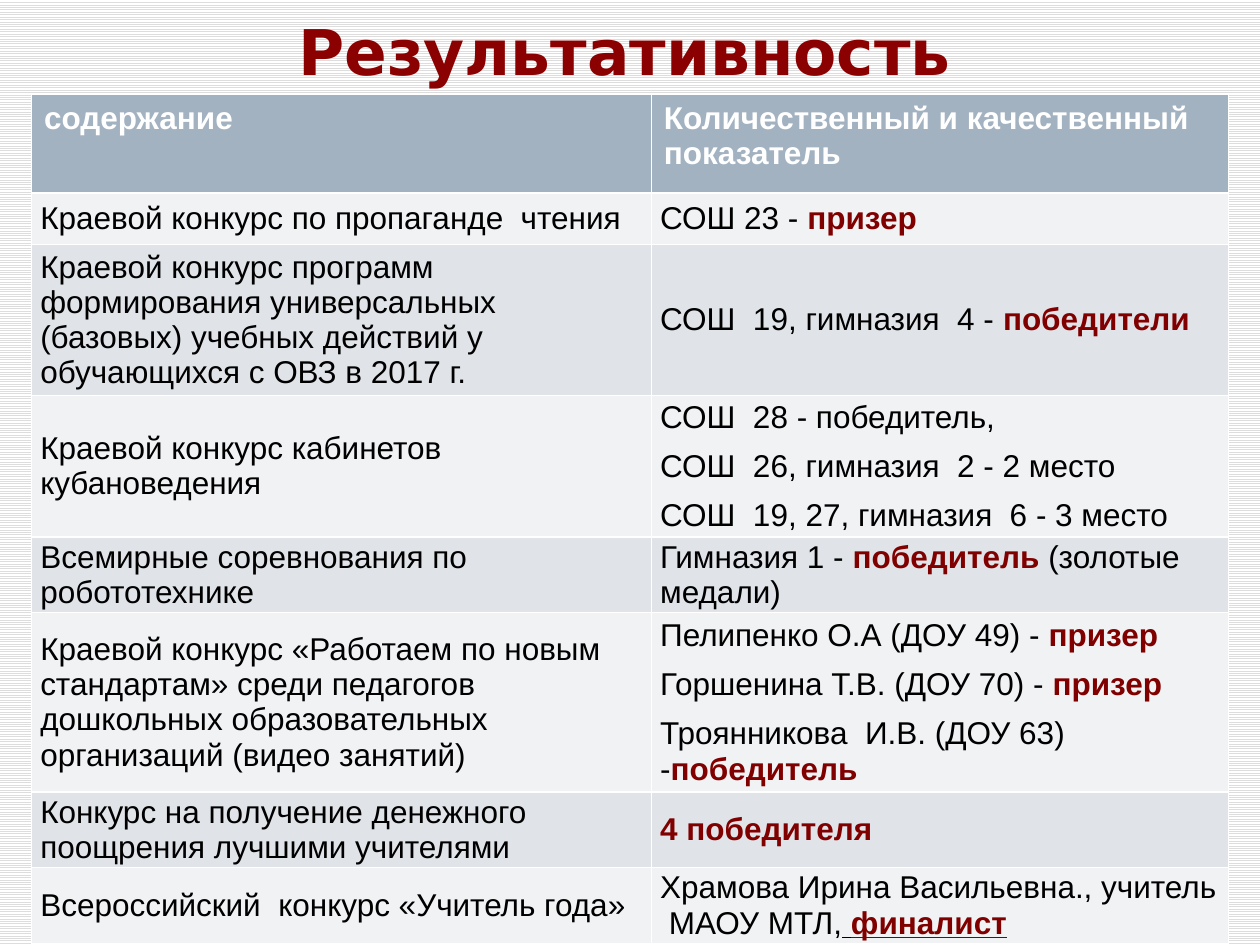
from typing import NamedTuple

from pptx import Presentation
from pptx import util as u
from pptx.dml.color import RGBColor
from pptx.enum import dml, text

HUES = {
    "title": "8B0000", "strong": "800000", "ink": "000000", "white": "FFFFFF",
    "stripe": "DDDDDD", "head": "A3B2C1", "light": "F0F2F4", "dark": "E0E4E9",
}
FONT, SIZE = "Arial", 18
COLS = (4.92, 4.58)


class Run(NamedTuple):
    words: str
    strong: bool = False
    under: bool = False


class Row(NamedTuple):
    high: float
    topic: str
    marks: list  # paragraphs, each a list of runs


def win(words: str, under: bool = False) -> Run:
    return Run(words, True, under)


HEAD = Row(0.78, "содержание", [[Run("Количественный и качественный показатель")]])
ROWS = [
    Row(0.41, "Краевой конкурс по пропаганде  чтения",
        [[Run("СОШ 23 - "), win("призер")]]),
    Row(1.2, "Краевой конкурс программ  формирования универсальных (базовых) "
        "учебных действий у обучающихся с ОВЗ в 2017 г.",
        [[Run("СОШ  19, гимназия  4 - "), win("победители")]]),
    Row(1.12, "Краевой конкурс кабинетов кубановедения",
        [[Run("СОШ  28 - победитель,")],
         [Run("СОШ  26, гимназия  2 - 2 место")],
         [Run("СОШ  19, 27, гимназия  6 - 3 место")]]),
    Row(0.6, "Всемирные соревнования по робототехнике",
        [[Run("Гимназия 1 - "), win("победитель"), Run(" (золотые медали)")]]),
    Row(1.42, "Краевой конкурс «Работаем по новым стандартам» среди педагогов\v"
        "дошкольных образовательных организаций (видео занятий)",
        [[Run("Пелипенко О.А (ДОУ 49) - "), win("призер")],
         [Run("Горшенина Т.В. (ДОУ 70) - "), win("призер")],
         [Run("Троянникова  И.В. (ДОУ 63) -"), win("победитель")]]),
    Row(0.6, "Конкурс на получение денежного поощрения лучшими учителями",
        [[win("4 победителя")]]),
    Row(0.6, "Всероссийский  конкурс «Учитель года»",
        [[Run("Храмова Ирина Васильевна., учитель  МАОУ МТЛ,"),
          Run(" ", under=True), win("финалист", under=True)]]),
]


def hue(name: str) -> RGBColor:
    return RGBColor.from_string(HUES[name])


def paint(cell, fill: str) -> None:
    cell.fill.solid()
    cell.fill.fore_color.rgb = hue(fill)


def write(cell, lines: list, ink: str = "ink", bold: bool = False) -> None:
    frame = cell.text_frame
    for i, line in enumerate(lines):
        para = frame.add_paragraph() if i else frame.paragraphs[0]
        para.space_after = u.Pt(0 if bold else 8)
        para.font.name, para.font.size = FONT, u.Pt(SIZE)
        for part in line:
            for j, words in enumerate(part.words.split("\v")):
                if j:
                    para.add_line_break()
                run = para.add_run()
                run.text = words
                run.font.name, run.font.size = FONT, u.Pt(SIZE)
                run.font.bold = bold or part.strong
                run.font.color.rgb = hue("strong" if part.strong else ink)
                if part.under:
                    run.font.underline = True


def add_title(slide, words: str) -> None:
    box = slide.shapes.add_textbox(
        u.Inches(0.67), u.Inches(0.08), u.Inches(8.75), u.Inches(0.67))
    frame = box.text_frame
    frame.word_wrap = True
    frame.vertical_anchor = text.MSO_ANCHOR.BOTTOM
    para = frame.paragraphs[0]
    para.alignment = text.PP_ALIGN.CENTER
    run = para.add_run()
    run.text = words
    run.font.name, run.font.size, run.font.bold = "DejaVu Sans", u.Pt(36), True
    run.font.color.rgb = hue("title")


def add_grid(slide, rows: list) -> None:
    high = sum(row.high for row in rows)
    grid = slide.shapes.add_table(
        len(rows), len(COLS), u.Inches(0.25), u.Inches(0.75),
        u.Inches(sum(COLS)), u.Inches(high)).table
    for col, wide in zip(grid.columns, COLS):
        col.width = u.Inches(wide)
    for i, row in enumerate(rows):
        grid.rows[i].height = u.Inches(row.high)
        fill = ("light" if i % 2 else "dark") if i else "head"
        for j, lines in enumerate(([[Run(row.topic)]], row.marks)):
            cell = grid.cell(i, j)
            paint(cell, fill)
            if i:
                cell.vertical_anchor = text.MSO_ANCHOR.MIDDLE
                cell.margin_left = cell.margin_right = u.Inches(0.07)
                cell.margin_top = cell.margin_bottom = 0
                write(cell, lines)
            else:
                write(cell, lines, "white", True)


def main() -> None:
    deck = Presentation()
    deck.slide_width, deck.slide_height = u.Inches(10), u.Inches(7.5)
    slide = deck.slides.add_slide(deck.slide_layouts[6])

    # Striped background
    back = slide.background.fill
    back.patterned()
    back.pattern = dml.MSO_PATTERN.LIGHT_HORIZONTAL
    back.fore_color.rgb = hue("stripe")
    back.back_color.rgb = hue("white")

    # Title and table of results
    add_title(slide, "Результативность ")
    add_grid(slide, [HEAD, *ROWS])
    deck.save("out.pptx")


if __name__ == "__main__":
    main()
